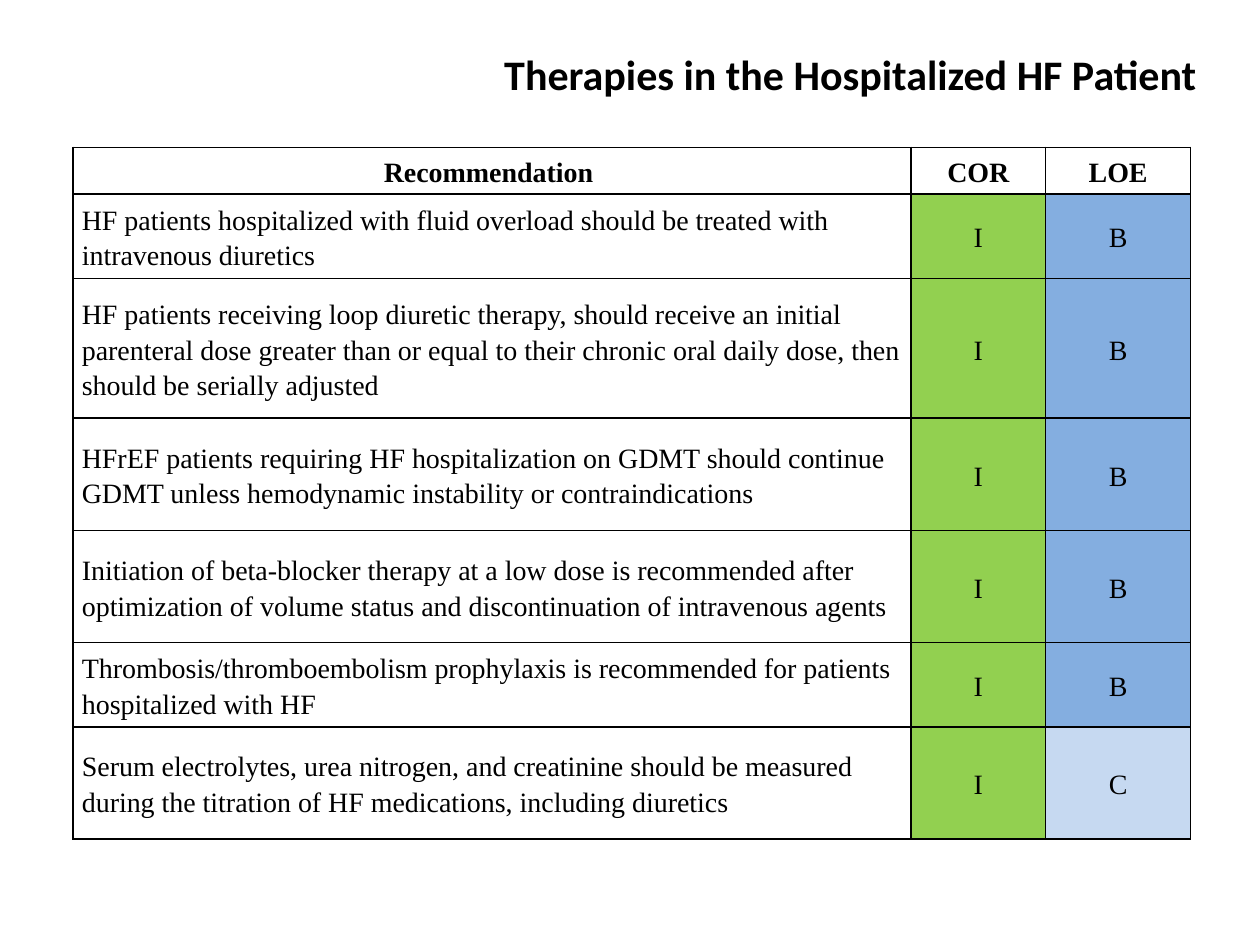
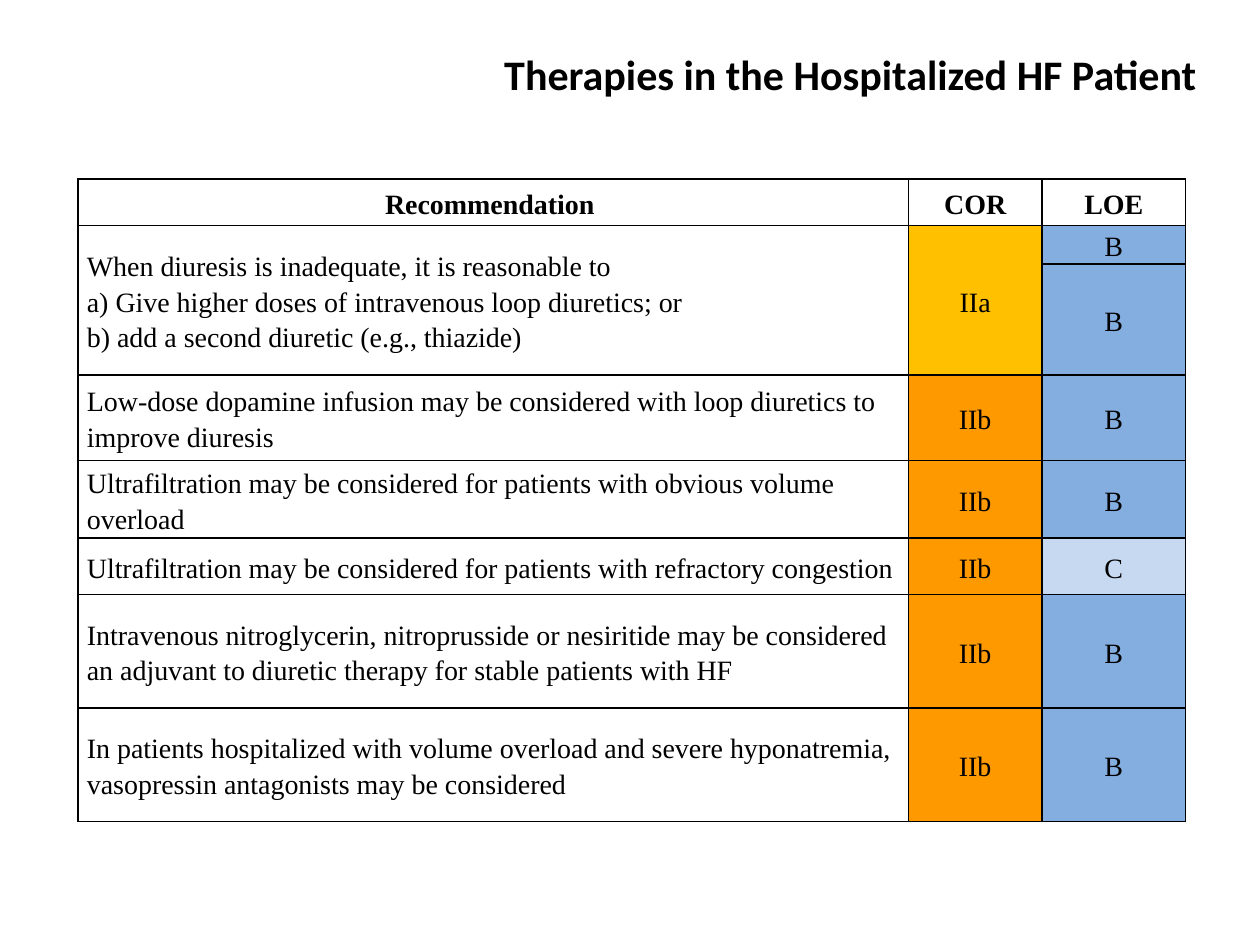
import pptx
import pptx.util
import pptx.dml.color
import pptx.enum.text
import lxml.etree
from dataclasses import dataclass
from pptx.oxml.ns import qn

# ---- Content: each row is (recommendation, class, level, row height) ----
TITLE = "Therapies in the Hospitalized HF Patient"
HEADER = ("Recommendation ", "COR", "LOE", 0.37)

SLIDES = [
    {
        "origin": (0.58, 1.17),
        "columns": (6.65, 1.07, 1.15),
        "rows": [
            ("HF patients hospitalized with fluid overload should be treated "
             "with intravenous diuretics", "I", "B", 0.67),
            ("HF patients receiving loop diuretic therapy, should receive an initial "
             "parenteral dose greater than or equal to their chronic oral daily dose, "
             "then should be serially adjusted", "I", "B", 1.11),
            ("HFrEF patients requiring HF hospitalization on GDMT should continue "
             "GDMT unless hemodynamic instability or contraindications", "I", "B", 0.89),
            ("Initiation of beta-blocker therapy at a low dose is recommended after "
             "optimization of volume status and discontinuation of intravenous agents",
             "I", "B", 0.89),
            ("Thrombosis/thromboembolism prophylaxis is recommended for patients "
             "hospitalized with HF", "I", "B", 0.67),
            ("Serum electrolytes, urea nitrogen, and creatinine should be measured "
             "during the titration of HF medications, including diuretics",
             "I", "C", 0.89),
        ],
    },
    {
        "origin": (0.62, 1.42),
        "columns": (6.59, 1.06, 1.14),
        # None continues the cell above
        "rows": [
            ("When diuresis is inadequate, it is reasonable to\n"
             "a) Give higher doses of intravenous loop diuretics; or\n"
             "b) add a second diuretic (e.g., thiazide)", "IIa", "B", 0.29),
            (None, None, "B", 0.88),
            ("Low-dose dopamine infusion may be considered with loop diuretics "
             "to improve diuresis", "IIb", "B", 0.68),
            ("Ultrafiltration may be considered for patients with obvious volume "
             "overload", "IIb", "B", 0.59),
            ("Ultrafiltration may be considered for patients with refractory "
             "congestion", "IIb", "C", 0.45),
            ("Intravenous nitroglycerin, nitroprusside or nesiritide may be considered "
             "an adjuvant to diuretic therapy for stable patients with HF",
             "IIb", "B", 0.9),
            ("In patients hospitalized with volume overload and severe hyponatremia, "
             "vasopressin antagonists may be considered", "IIb", "B", 0.9),
        ],
    },
]


# ---- Theme ----
@dataclass(frozen=True)
class Theme:
    title_font: str = "Calibri"
    table_font: str = "Times New Roman"
    title_size: int = 24
    table_size: int = 16
    line_spacing: float = 1.15
    inset: float = 0.07
    border: int = 1
    ink: str = "000000"
    paper: str = "FFFFFF"


THEME = Theme()
GRADE_FILLS = {"I": "92D050", "IIa": "FFC000", "IIb": "FF9900",
               "B": "84AEE0", "C": "C6D9F1"}
TITLE_BOX = (2.25, 0.17, 9, 0.83)

Inches = pptx.util.Inches
RGB = pptx.dml.color.RGBColor.from_string
ALIGN = pptx.enum.text.PP_ALIGN
MIDDLE = pptx.enum.text.MSO_ANCHOR.MIDDLE


def style_font(font, name, size, bold):
    font.name, font.size, font.bold = name, pptx.util.Pt(size), bold
    font.color.rgb = RGB(THEME.ink)


def add_title(s):
    tf = s.shapes.add_textbox(*map(Inches, TITLE_BOX)).text_frame
    tf.word_wrap = True
    tf.vertical_anchor = MIDDLE
    p = tf.paragraphs[0]
    p.text = TITLE
    p.alignment = ALIGN.CENTER
    style_font(p.font, THEME.title_font, THEME.title_size, True)


def set_borders(cell):
    tc_pr = cell._tc.get_or_add_tcPr()
    for side in ("a:lnL", "a:lnR", "a:lnT", "a:lnB"):
        ln = lxml.etree.SubElement(tc_pr, qn(side), w=str(pptx.util.Pt(THEME.border)))
        fill = lxml.etree.SubElement(ln, qn("a:solidFill"))
        lxml.etree.SubElement(fill, qn("a:srgbClr"), val=THEME.ink)


def format_cell(cell, text, fill, centred, bold):
    set_borders(cell)
    if fill:
        cell.fill.solid()
        cell.fill.fore_color.rgb = RGB(fill)
    else:
        cell.fill.background()
    cell.vertical_anchor = MIDDLE
    cell.margin_left = cell.margin_right = Inches(THEME.inset)
    cell.margin_top = cell.margin_bottom = 0
    cell.text = text or ""
    for p in cell.text_frame.paragraphs:
        p.alignment = ALIGN.CENTER if centred else ALIGN.LEFT
        p.line_spacing = THEME.line_spacing
        style_font(p.font, THEME.table_font, THEME.table_size, bold)


def add_recommendations(s, origin, columns, rows):
    rows = [HEADER, *rows]
    size = (sum(columns), sum(row[-1] for row in rows))
    table = s.shapes.add_table(len(rows), len(columns),
                               *map(Inches, origin + size)).table
    table.first_row = table.horz_banding = False
    for column, width in zip(table.columns, columns):
        column.width = Inches(width)
    for i, (*texts, height) in enumerate(rows):
        table.rows[i].height = Inches(height)
        header = i == 0
        for j, text in enumerate(texts):
            fill = THEME.paper if header else GRADE_FILLS.get(text)
            format_cell(table.cell(i, j), text, fill, header or j > 0, header)
            if text is None:
                table.cell(i - 1, j).merge(table.cell(i, j))


def main():
    prs = pptx.Presentation()
    prs.slide_width, prs.slide_height = Inches(10), Inches(7.5)
    for content in SLIDES:
        s = prs.slides.add_slide(prs.slide_layouts[6])
        s.background.fill.solid()
        s.background.fill.fore_color.rgb = RGB(THEME.paper)
        add_title(s)
        add_recommendations(s, **content)
    prs.save("out.pptx")


if __name__ == "__main__":
    main()
